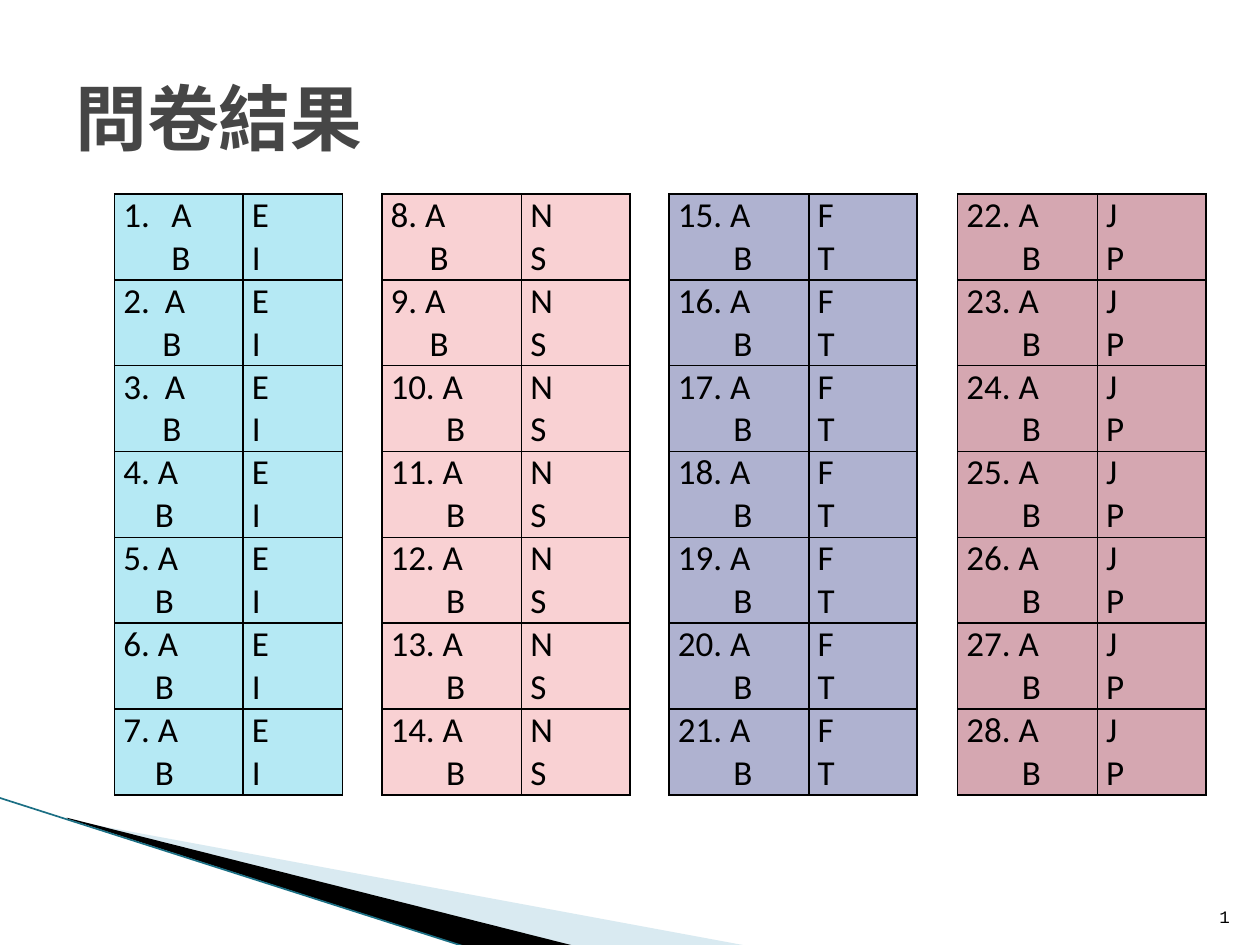
from pptx import Presentation
from pptx.dml.color import RGBColor as RGB
from pptx.enum.shapes import MSO_CONNECTOR as Link
from pptx.enum.text import MSO_ANCHOR as Anchor, PP_ALIGN as Align
from pptx.oxml.ns import qn
from pptx.util import Inches, Pt
from lxml.etree import SubElement as Sub

COLORS = {
    "ink": "000000", "title": "464646", "pale": "A0CBDC", "edge": "1B6F84",
    "cyan": "B5E9F4", "pink": "F9D1D3", "blue": "AFB2D0", "rose": "D5A7B1",
}
ROWS = 7
TABBED = (2, 3)


def rgb(name):
    return RGB.from_string(COLORS[name])


class Page:
    """Style and current slide, with a method for each kind of element."""
    body, mono = "Calibri", "Courier New"

    def __init__(self, deck):
        self.slide = deck.slides.add_slide(deck.slide_layouts[6])
        self.shapes = self.slide.shapes

    def style(self, para, size, face, color="ink", bold=False):
        font = para.font
        font.size, font.name, font.bold = Pt(size), face, bold
        font.color.rgb = rgb(color)

    def text(self, words, box, size, anchor, align=Align.LEFT, **look):
        frame = self.shapes.add_textbox(*map(Inches, box)).text_frame
        frame.word_wrap = True
        frame.vertical_anchor = anchor
        para = frame.paragraphs[0]
        para.text, para.alignment = words, align
        self.style(para, size, self.mono, **look)

    def wedge(self, points, color, alpha=100):
        start, *rest = [(Inches(x), Inches(y)) for x, y in points]
        pen = self.shapes.build_freeform(*start)
        pen.add_line_segments(rest, close=True)
        shape = pen.convert_to_shape()
        shape.shadow.inherit = False
        shape.line.fill.background()
        shape.fill.solid()
        shape.fill.fore_color.rgb = rgb(color)
        if alpha < 100:
            tone = shape.fill._xPr.find(qn("a:solidFill"))[0]
            Sub(tone, qn("a:alpha"), val=str(alpha * 1000))

    def line(self, start, end, color, width):
        link = self.shapes.add_connector(
            Link.STRAIGHT, *map(Inches, (*start, *end)))
        link.line.color.rgb, link.line.width = rgb(color), Pt(width)
        Sub(link._element.spPr, qn("a:effectLst"))

    def cell(self, cell, lines, color):
        cell.margin_left = cell.margin_right = Inches(0.07)
        cell.margin_top = cell.margin_bottom = 0
        props = cell._tc.get_or_add_tcPr()
        for side in "LRTB":
            edge = Sub(props, qn("a:ln" + side), w=str(Pt(1)))
            Sub(Sub(edge, qn("a:solidFill")), qn("a:srgbClr"),
                val=COLORS["ink"])
        cell.fill.solid()
        cell.fill.fore_color.rgb = rgb(color)
        cell.text = "\n".join(lines)

    def table(self, left, cols, first, pair, color):
        grid = self.shapes.add_table(
            ROWS, 2, Inches(left), Inches(1.54),
            Inches(sum(cols)), Inches(4.77)).table
        grid.first_row = grid.horz_banding = False
        for col, width in zip(grid.columns, cols):
            col.width = Inches(width)
        for row in range(ROWS):
            num = first + row
            ask, key = grid.cell(row, 0), grid.cell(row, 1)
            self.cell(ask, (label(num), "B"), color)
            self.cell(key, pair, color)
            top, low = ask.text_frame.paragraphs
            low._p.get_or_add_pPr().set("marL", str(Inches(indent(num))))
            if num == 1:
                number(top)
            elif num in TABBED:
                tab(top, 0.33)
            for para in (top, low, *key.text_frame.paragraphs):
                self.style(para, 20, self.body)


def label(num):
    """The first question is auto-numbered, the next two use a tab."""
    if num == 1:
        return "A"
    return f"{num}.\tA" if num in TABBED else f"{num}. A"


def indent(num):
    """Left edge of the B answer."""
    if num > 9:
        return 0.44
    if num == 1:
        return 0.38
    return 0.25 if 4 <= num <= 7 else 0.31


def number(para):
    props = para._p.get_or_add_pPr()
    props.set("marL", str(Inches(0.38)))
    props.set("indent", str(-Inches(0.38)))
    Sub(props, qn("a:buFont"), typeface="+mj-lt")
    Sub(props, qn("a:buAutoNum"), type="arabicPeriod")


def tab(para, pos):
    stops = Sub(para._p.get_or_add_pPr(), qn("a:tabLst"))
    Sub(stops, qn("a:tab"), pos=str(Inches(pos)), algn="l")


def main():
    deck = Presentation()
    deck.slide_width, deck.slide_height = Inches(10), Inches(7.5)
    page = Page(deck)

    # Corner sweep
    page.wedge([(0.55, 6.51), (5.95, 7.51), (4.56, 7.51), (0.55, 6.5)],
               "pale", 40)
    page.wedge([(0.53, 6.49), (4.57, 7.51), (3.72, 7.52), (0.54, 6.5)],
               "ink")
    page.line((-0.01, 6.33), (3.71, 7.52), "edge", 0.95)

    # Title
    page.text("問卷結果", (0.5, 0.3, 9, 1.25), 41, Anchor.MIDDLE,
              color="title", bold=True)

    # Answer tables, seven questions each
    wide = (1.11, 0.86)
    tables = [
        (0.91, (1.02, 0.79), "EI", "cyan"),
        (3.03, wide, "NS", "pink"),
        (5.31, wide, "FT", "blue"),
        (7.6, wide, "JP", "rose"),
    ]
    for i, (left, cols, pair, color) in enumerate(tables):
        page.table(left, cols, 1 + i * ROWS, pair, color)

    # Page number
    page.text("1", (9.46, 7.01, 0.4, 0.4), 10, Anchor.BOTTOM, Align.RIGHT)

    deck.save("out.pptx")


if __name__ == "__main__":
    main()
